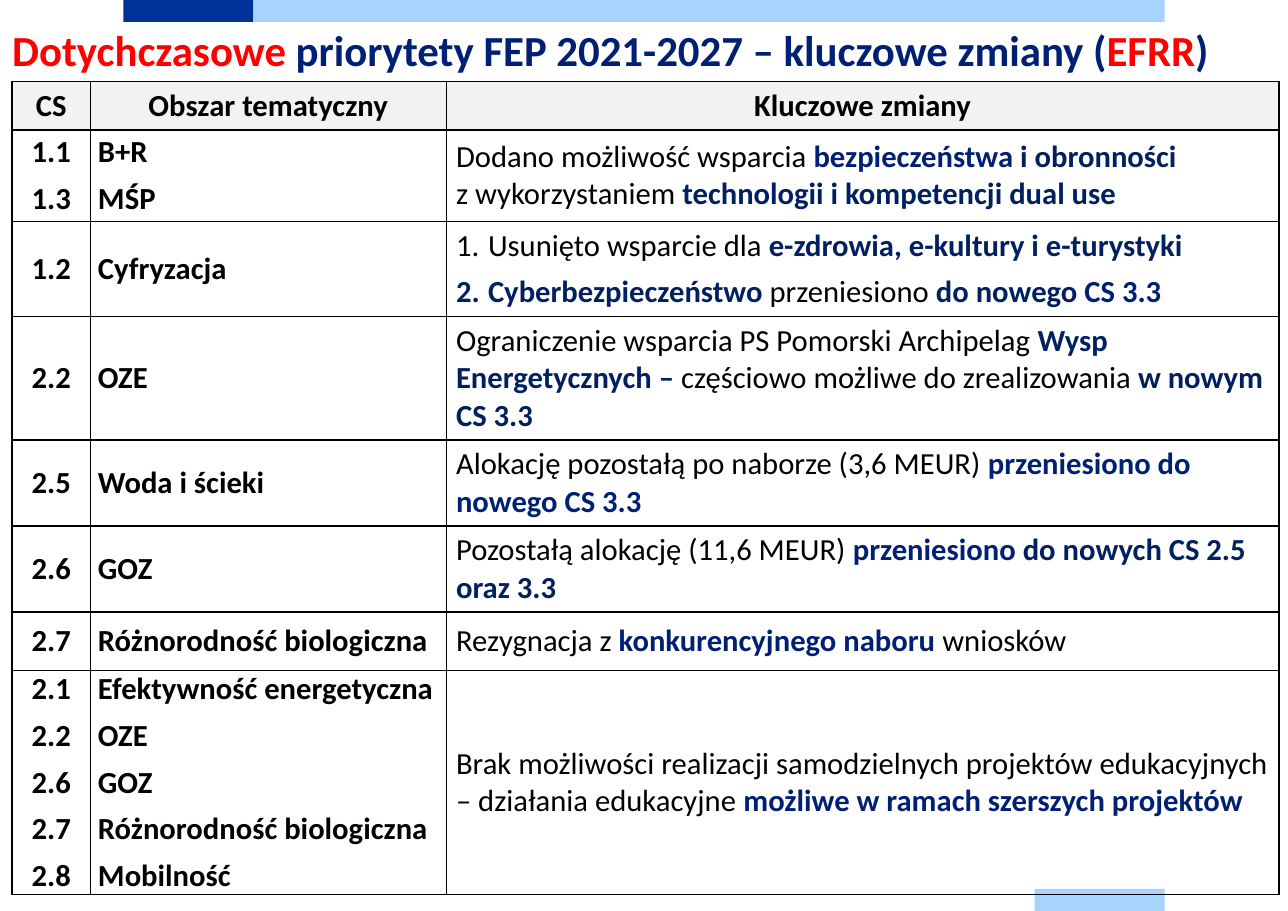
from lxml import etree
from pptx import Presentation
from pptx.dml.color import RGBColor
from pptx.enum.shapes import MSO_SHAPE
from pptx.enum.text import MSO_ANCHOR, MSO_AUTO_SIZE, PP_ALIGN
from pptx.oxml import parse_xml
from pptx.oxml.ns import nsdecls
from pptx.util import Pt

PX = 9144  # 100 px to the inch
COLORS = {"black": "000000", "red": "FF0000", "navy": "002073", "deep": "002060",
          "blue": "003399", "sky": "A6D3FF", "grey": "F2F2F2"}


def color(name):
    return RGBColor.from_string(COLORS[name])


def write_runs(para, pieces, size):
    """Add (text, colour, bold) pieces; a "\n" piece is a line break."""
    for text, name, bold in pieces:
        if text == "\n":
            para.add_line_break()
            continue
        span = para.add_run()
        span.text = text
        span.font.name = "Calibri"
        span.font.size = Pt(size)
        span.font.bold = bold
        span.font.color.rgb = color(name)


deck = Presentation()
deck.slide_width, deck.slide_height = 1169 * PX, 827 * PX
page = deck.slides.add_slide(deck.slide_layouts[5])

# Bars at the top and bottom edges
for left, top, width, name in [(112, 0, 118, "blue"), (230, 0, 827, "sky"), (939, 807, 118, "sky")]:
    bar = page.shapes.add_shape(MSO_SHAPE.RECTANGLE, left * PX, top * PX, width * PX, 20 * PX)
    bar.shadow.inherit = False
    bar.fill.solid()
    bar.fill.fore_color.rgb = color(name)
    bar.line.fill.background()

# Title
title = page.shapes.title
title.left, title.top, title.width, title.height = 11 * PX, 17 * PX, 1149 * PX, 56 * PX
frame = title.text_frame
frame.margin_left = frame.margin_right = frame.margin_top = frame.margin_bottom = 0
frame.auto_size = MSO_AUTO_SIZE.NONE
frame.vertical_anchor = MSO_ANCHOR.MIDDLE
heading = frame.paragraphs[0]
heading.alignment = PP_ALIGN.LEFT
heading.line_spacing = Pt(33.9)
write_runs(heading, [("Dotychczasowe", "red", True),
                     (" priorytety FEP 2021-2027 – kluczowe zmiany (", "navy", True),
                     ("EFRR", "red", True), (")", "navy", True)], 28)

# Table content: row height, codes, thematic areas, paragraphs of changes
HEADERS = ["CS", "Obszar tematyczny", "Kluczowe zmiany"]
ROWS = [
    (83, ["1.1", "1.3"], ["B+R", "MŚP"],
     [[("Dodano możliwość wsparcia ", "black", False), ("bezpieczeństwa ", "navy", True),
       ("i obronności ", "deep", True), ("\n", "deep", True),
       ("z wykorzystaniem ", "black", False),
       ("technologii i kompetencji dual use", "deep", True)]]),
    (86, ["1.2"], ["Cyfryzacja"],
     [[("Usunięto wsparcie dla ", "black", False),
       ("e-zdrowia, e-kultury i e-turystyki", "deep", True)],
      [("Cyberbezpieczeństwo", "deep", True), (" przeniesiono ", "black", False),
       ("do nowego ", "deep", True), ("CS 3.3", "navy", True)]]),
    (112, ["2.2"], ["OZE"],
     [[("Ograniczenie wsparcia PS Pomorski Archipelag ", "black", False),
       ("Wysp Energetycznych – ", "deep", True),
       ("częściowo możliwe do zrealizowania ", "black", False),
       ("w nowym CS 3.3", "deep", True)]]),
    (77, ["2.5"], ["Woda i ścieki"],
     [[("Alokację pozostałą po naborze (3,6 MEUR) ", "black", False),
       ("przeniesiono do nowego CS 3.3", "navy", True)]]),
    (78, ["2.6"], ["GOZ"],
     [[("Pozostałą alokację (11,6 MEUR) ", "black", False), ("przeniesiono ", "navy", True),
       ("do nowych CS 2.5 oraz 3.3", "deep", True)]]),
    (53, ["2.7"], ["Różnorodność biologiczna"],
     [[("Rezygnacja z ", "black", False), ("konkurencyjnego naboru ", "navy", True),
       ("wniosków", "black", False)]]),
    (203, ["2.1", "2.2", "2.6", "2.7", "2.8"],
     ["Efektywność energetyczna", "OZE", "GOZ", "Różnorodność biologiczna", "Mobilność"],
     [[("Brak możliwości realizacji samodzielnych projektów edukacyjnych – działania edukacyjne ",
        "black", False),
       ("możliwe w ramach szerszych projektów", "navy", True)]]),
]
heights = [43] + [row[0] for row in ROWS]
contents = [[[header] for header in HEADERS]] + [row[1:] for row in ROWS]

table = page.shapes.add_table(len(heights), 3, 11 * PX, 74 * PX, 1150 * PX, sum(heights) * PX).table
table.first_row = table.horz_banding = False
for column, width in zip(table.columns, [71, 323, 756]):
    column.width = width * PX

for row_index, (height, cells) in enumerate(zip(heights, contents)):
    table.rows[row_index].height = height * PX
    is_header = row_index == 0
    for column_index, paragraphs in enumerate(cells):
        cell = table.cell(row_index, column_index)
        is_tight = not is_header and column_index < 2
        cell.margin_left = cell.margin_right = (7 if is_tight else 9) * PX
        cell.margin_top = cell.margin_bottom = (0 if is_tight else 5) * PX
        is_list = is_tight and row_index == len(ROWS)
        cell.vertical_anchor = MSO_ANCHOR.TOP if is_list else MSO_ANCHOR.MIDDLE
        if is_header:
            cell.fill.solid()
            cell.fill.fore_color.rgb = color("grey")
        else:
            cell.fill.background()
        properties = cell._tc.get_or_add_tcPr()
        for position, side in enumerate("LRTB"):
            properties.insert(position, parse_xml(
                f'<a:ln{side} w="12700" {nsdecls("a")}><a:solidFill>'
                f'<a:srgbClr val="{COLORS["black"]}"/></a:solidFill></a:ln{side}>'))

        for index, pieces in enumerate(paragraphs):
            para = cell.text_frame.paragraphs[0] if index == 0 else cell.text_frame.add_paragraph()
            centred = is_header or column_index == 0
            para.alignment = PP_ALIGN.CENTER if centred else PP_ALIGN.LEFT
            if not is_header:
                para.space_after = Pt(6)
            if column_index == 2 and len(paragraphs) > 1:
                settings = para._p.get_or_add_pPr()
                settings.set("marL", str(29 * PX))
                settings.set("indent", str(-29 * PX))
                numbering = parse_xml(f'<a:buAutoNum type="arabicPeriod" {nsdecls("a")}/>')
                settings.append(numbering)
            if isinstance(pieces, str):
                pieces = [(pieces, "black", True)]
            write_runs(para, pieces, 20)

deck.save("out.pptx")
